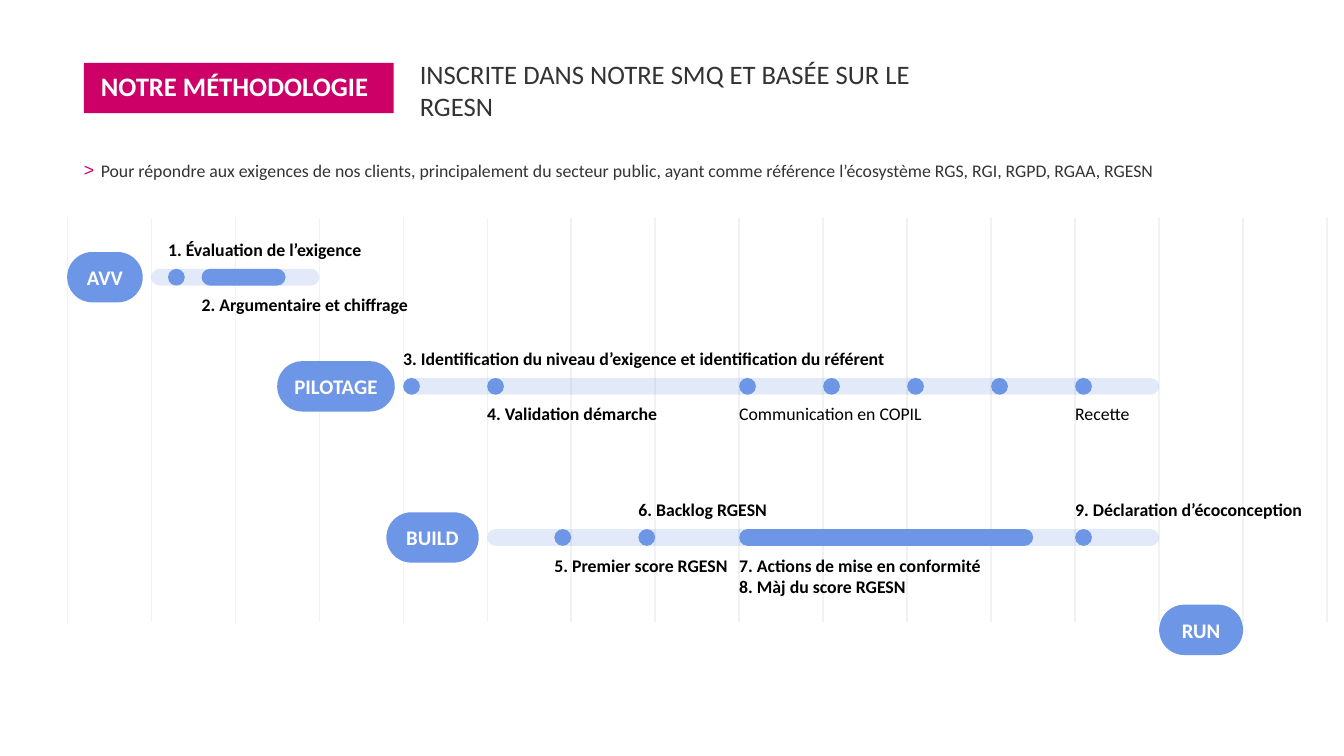
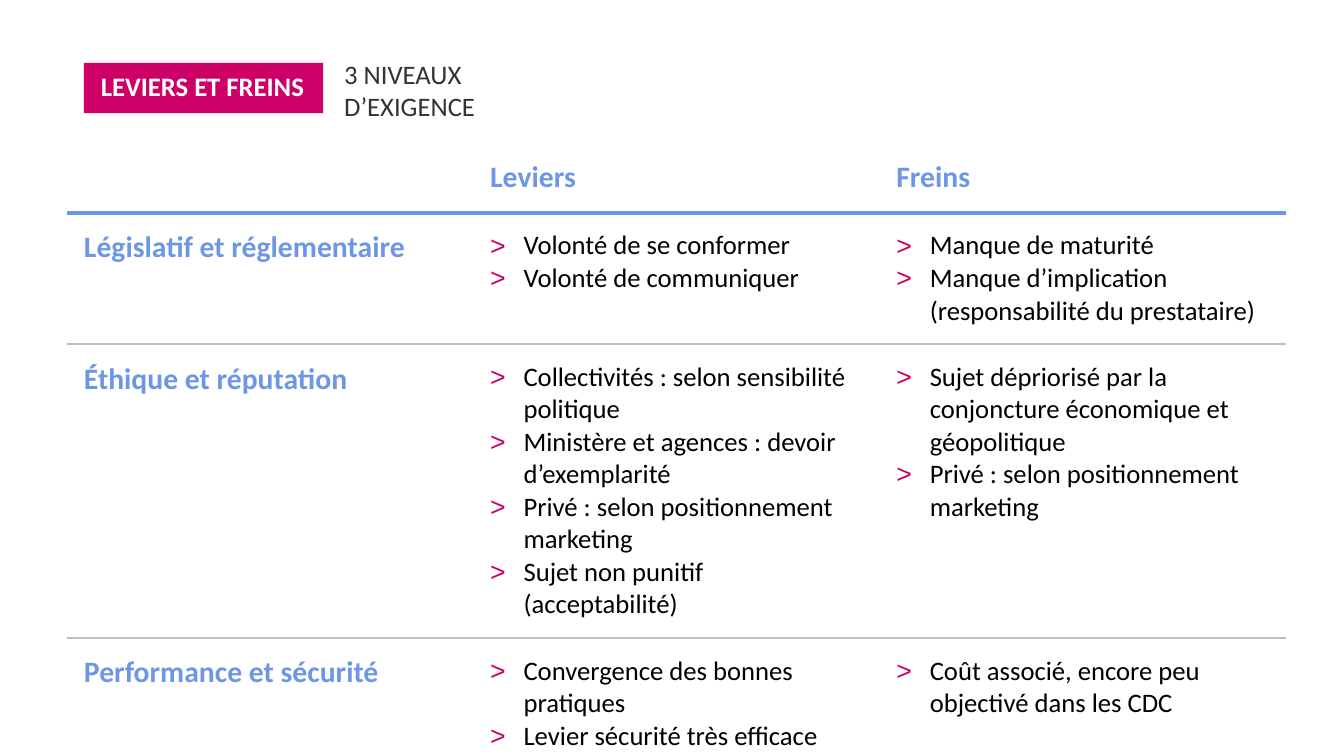
import pptx
import pptx.dml.color
import pptx.enum.shapes
import pptx.enum.text
import pptx.oxml.ns
import pptx.util
from lxml import etree

PINK, BLUE, GREY = "CC0066", "6E96E6", "333333"
WHITE, BLACK, PALE, RULE = "FFFFFF", "000000", "F2F2F2", "BFBFBF"
FONT = "Calibri"
INSET = 11.34
MIDDLE = pptx.enum.text.MSO_ANCHOR.MIDDLE
TOP = pptx.enum.text.MSO_ANCHOR.TOP
LEFT = pptx.enum.text.PP_ALIGN.LEFT
CENTER = pptx.enum.text.PP_ALIGN.CENTER

UNIT = 56.7            # width of one timeline column
BAR = 0.2 * UNIT       # height of a track, size of a milestone
PILL = 0.6 * UNIT
COLUMNS, GRID_HEIGHT = 15, 4.8 * UNIT
LABEL = 26

# Row, start and length are counted in timeline units.
# Marks: (start, length); labels: (start, width, side, bold, lines).
PHASES = [
    dict(name="AVV", row=0.6, pill=0.9, start=1, length=2,
         marks=[(1.2, 0.2), (1.6, 1)],
         labels=[(1.2, 3.1, "above", True, ["1. Évaluation de l’exigence"]),
                 (1.6, 2.8, "below", True, ["2. Argumentaire et chiffrage"])]),
    dict(name="PILOTAGE", row=1.9, pill=1.4, start=4, length=9,
         marks=[(start, 0.2) for start in (4, 5, 8, 9, 10, 11, 12)],
         labels=[(4, 5.9, "above", True,
                  ["3. Identification du niveau d’exigence et identification du référent"]),
                 (5, 2.3, "below", True, ["4. Validation démarche"]),
                 (8, 2.4, "below", False, ["Communication en COPIL"]),
                 (12, 2.3, "below", False, ["Recette"])]),
    dict(name="BUILD", row=3.7, pill=1.1, start=5, length=8,
         marks=[(5.8, 0.2), (6.8, 0.2), (8, 3.5), (12, 0.2)],
         labels=[(5.8, 2.15, "below", True, ["5. Premier score RGESN"]),
                 (6.8, 1.65, "above", True, ["6. Backlog RGESN"]),
                 (8, 3, "below", True,
                  ["7. Actions de mise en conformité", "8. Màj du score RGESN"]),
                 (12, 3, "above", True, ["9. Déclaration d’écoconception"])]),
]

LEVELS = [
    ("Législatif et réglementaire",
     ["Volonté de se conformer", "Volonté de communiquer"],
     ["Manque de maturité", "Manque d’implication (responsabilité du prestataire)"]),
    ("Éthique et réputation",
     ["Collectivités : selon sensibilité politique",
      "Ministère et agences : devoir d’exemplarité",
      "Privé : selon positionnement marketing",
      "Sujet non punitif (acceptabilité)"],
     ["Sujet dépriorisé par la conjoncture économique et géopolitique",
      "Privé : selon positionnement marketing"]),
    ("Performance et sécurité",
     ["Convergence des bonnes pratiques", "Levier sécurité très efficace"],
     ["Coût associé, encore peu objectivé dans les CDC"]),
]


def points(*lengths):
    return [pptx.util.Pt(round(length, 2)) for length in lengths]


def color(value):
    return pptx.dml.color.RGBColor.from_string(value)


def child(parent, tag, **attributes):
    return etree.SubElement(parent, pptx.oxml.ns.qn(tag), attributes)


def place(shape, left, top, width, height):
    shape.left, shape.top, shape.width, shape.height = points(left, top, width, height)


def set_frame(frame, anchor=TOP, insets=(0, 0, 0, 0)):
    frame.word_wrap = True
    frame.auto_size = pptx.enum.text.MSO_AUTO_SIZE.NONE
    frame.vertical_anchor = anchor
    (frame.margin_left, frame.margin_top,
     frame.margin_right, frame.margin_bottom) = points(*insets)


def set_bullet(para, char, hang):
    """Give the paragraph a pink bullet, or none when char is None."""
    properties = para._p.get_or_add_pPr()
    indent = pptx.util.Pt(hang)
    properties.set("marL", str(indent))
    properties.set("indent", str(-indent))
    if char is None:
        child(properties, "a:buNone")
    else:
        child(child(properties, "a:buClr"), "a:srgbClr", val=PINK)
        child(properties, "a:buFont", typeface="Arial")
        child(properties, "a:buChar", char=char)


def write(frame, lines, size, ink, bold=False, align=LEFT, bullet=None, hang=0):
    for index, line in enumerate(lines):
        para = frame.add_paragraph() if index else frame.paragraphs[0]
        set_bullet(para, bullet, hang)
        para.alignment = align
        para.space_before = pptx.util.Pt(0)
        span = para.add_run()
        span.text = line
        span.font.name = FONT
        span.font.size = pptx.util.Pt(size)
        span.font.bold = bold
        span.font.color.rgb = color(ink)


def add_heading(page, title, title_width, subtitle, subtitle_left, subtitle_width):
    """Fill the title band and the subtitle beside it."""
    band = page.shapes.title
    place(band, 56.7, 42.5, title_width, 34)
    band.fill.solid()
    band.fill.fore_color.rgb = color(PINK)
    set_frame(band.text_frame, MIDDLE, (INSET, 7, 5, 7))
    write(band.text_frame, [title], 18, WHITE, bold=True)
    band.text_frame.paragraphs[0].line_spacing = 0.9

    box = page.placeholders[1]
    place(box, subtitle_left, 45.5, subtitle_width, 30)
    set_frame(box.text_frame, MIDDLE, (INSET, 7, INSET, 7))
    write(box.text_frame, [subtitle], 18, GREY)


def add_pill(page, left, top, width, height, opacity=100):
    pill = page.shapes.add_shape(
        pptx.enum.shapes.MSO_SHAPE.ROUNDED_RECTANGLE, *points(left, top, width, height))
    pill.adjustments[0] = 0.5
    pill.shadow.inherit = False
    pill.line.fill.background()
    pill.fill.solid()
    pill.fill.fore_color.rgb = color(BLUE)
    if opacity < 100:
        fill = pill.element.spPr.find(pptx.oxml.ns.qn("a:solidFill"))
        child(fill[0], "a:alpha", val=str(opacity * 1000))
    return pill


def add_name(page, name, left, center, width):
    pill = add_pill(page, left, center - PILL / 2, width, PILL)
    set_frame(pill.text_frame, MIDDLE)
    write(pill.text_frame, [name], 14, WHITE, bold=True, align=CENTER)


def add_label(page, left, top, width, lines, bold):
    height = LABEL + 14.6 * (len(lines) - 1)
    box = page.shapes.add_textbox(*points(left, top, width, height))
    set_frame(box.text_frame, insets=(0, 5.67, 0, 5.67))
    write(box.text_frame, lines, 12, BLACK, bold)


def add_plain_table(page, rows, columns, left, top, width, height):
    table = page.shapes.add_table(
        rows, columns, *points(left, top, width, height)).table
    table.first_row = table.horz_banding = False
    return table


def set_cell(cell, **borders):
    """Clear the fill and draw borders given as L, R, T, B = (colour, width)."""
    properties = cell._tc.get_or_add_tcPr()
    for side in "LRTB":
        if side in borders:
            ink, width = borders[side]
            line = child(properties, "a:ln" + side, w=str(pptx.util.Pt(width)))
            child(child(line, "a:solidFill"), "a:srgbClr", val=ink)
    cell.fill.background()


def add_phase(page, phase, left, top):
    track_top = top + phase["row"] * UNIT
    track_left = left + phase["start"] * UNIT
    add_pill(page, track_left, track_top, phase["length"] * UNIT, BAR, opacity=20)
    add_name(page, phase["name"], track_left - (phase["pill"] + 0.1) * UNIT,
             track_top + BAR / 2, phase["pill"] * UNIT)
    for start, length in phase["marks"]:
        add_pill(page, left + start * UNIT, track_top, length * UNIT, BAR)
    for start, width, side, bold, lines in phase["labels"]:
        label_top = track_top - LABEL if side == "above" else track_top + BAR
        add_label(page, left + start * UNIT, label_top, width * UNIT, lines, bold)


def add_timeline(page, left, top):
    grid = add_plain_table(page, 1, COLUMNS, left, top, COLUMNS * UNIT, GRID_HEIGHT)
    for cell in grid.iter_cells():
        set_cell(cell, L=(PALE, 1), R=(PALE, 1))
    for phase in PHASES:
        add_phase(page, phase, left, top)
    add_name(page, "RUN", left + 13 * UNIT, top + GRID_HEIGHT + BAR / 2, UNIT)


def add_levels(page, left, top, width):
    """Add the table of levers and brakes; its rows grow with their text."""
    rows = [("", ["Leviers"], ["Freins"])] + LEVELS
    table = add_plain_table(page, len(rows), 3, left, top, width, 29.5 * len(rows))
    rules = [(WHITE, 1), (BLUE, 3)] + [(RULE, 1)] * (len(LEVELS) - 1) + [(WHITE, 1)]
    for row, (level, *lists) in enumerate(rows):
        for column, lines in enumerate([[level], *lists]):
            cell = table.cell(row, column)
            set_cell(cell, L=(WHITE, 1), R=(WHITE, 1), T=rules[row], B=rules[row + 1])
            (cell.margin_left, cell.margin_top,
             cell.margin_right, cell.margin_bottom) = points(*[INSET] * 4)
            if row and column:
                write(cell.text_frame, lines, 18, BLACK, bullet="˃", hang=22.5)
            elif lines[0]:
                write(cell.text_frame, lines, 20, BLUE, bold=True)


def build_method(deck):
    page = deck.slides.add_slide(deck.slide_layouts[3])
    add_heading(page, "NOTRE MÉTHODOLOGIE", 209,
                "INSCRITE DANS NOTRE SMQ ET BASÉE SUR LE RGESN", 272, 400)
    intro = page.placeholders[2]
    place(intro, 56.7, 108, 793.7, 14.6)
    set_frame(intro.text_frame)
    write(intro.text_frame,
          ["Pour répondre aux exigences de nos clients, principalement du secteur public, "
           "ayant comme référence l’écosystème RGS, RGI, RGPD, RGAA, RGESN"],
          12, GREY, bullet=">", hang=INSET)
    add_timeline(page, 45.36, 147.5)


def build_levels(deck):
    page = deck.slides.add_slide(deck.slide_layouts[1])
    add_heading(page, "LEVIERS ET FREINS", 161.5, "3 NIVEAUX D’EXIGENCE", 221, 185)
    add_levels(page, 45.36, 96.5, 822.6)


def main():
    deck = pptx.Presentation()
    deck.slide_width, deck.slide_height = points(907.2, 510.5)
    build_method(deck)
    build_levels(deck)
    deck.save("out.pptx")


if __name__ == "__main__":
    main()
